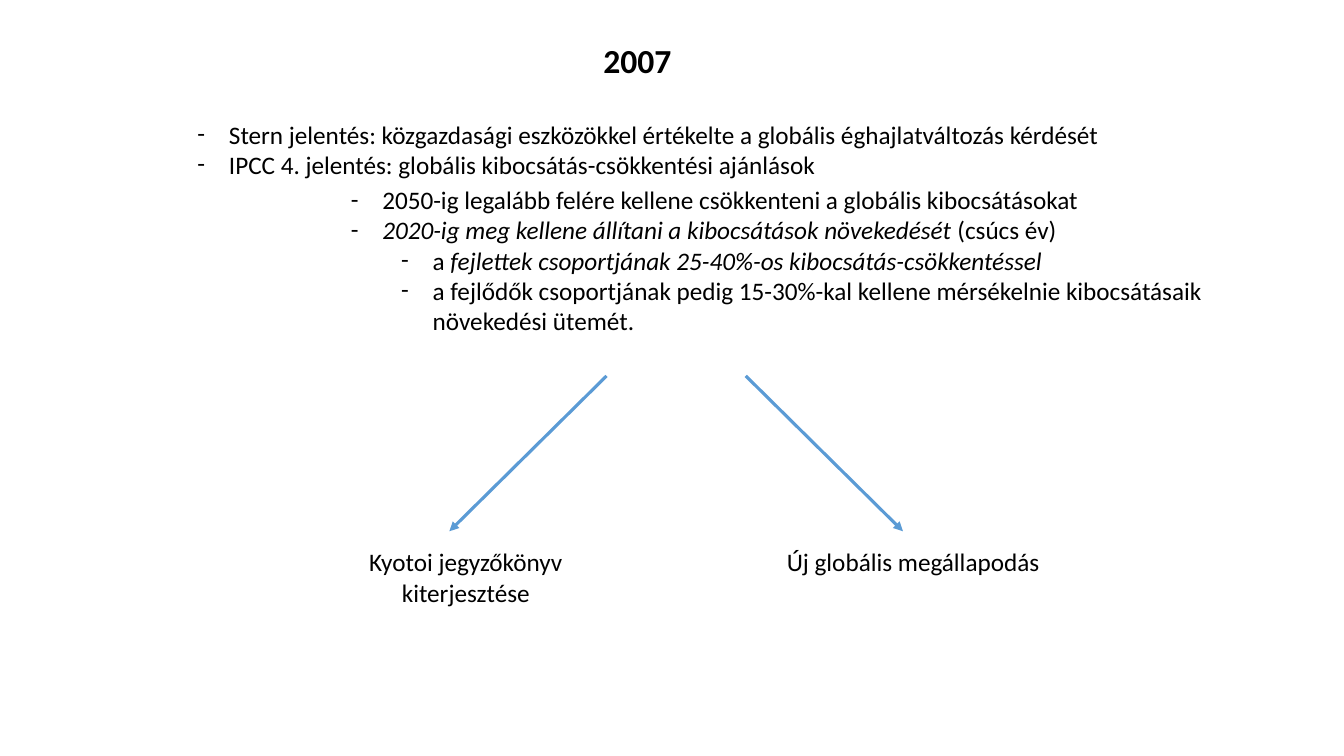
import pptx
import pptx.util
import pptx.dml.color
import pptx.enum.shapes
import pptx.enum.text
import lxml.etree
import pptx.oxml.ns

Pt = pptx.util.Pt
BLACK = pptx.dml.color.RGBColor(0x00, 0x00, 0x00)
BLUE = pptx.dml.color.RGBColor(0x5B, 0x9B, 0xD5)
CENTER = pptx.enum.text.PP_ALIGN.CENTER
FONT = "Calibri"
HANG = 22.5
LEVEL_STEP = 36

# Paragraphs are (level, runs); runs are (text, italic).
REPORTS = [
    (0, [("Stern jelentés: közgazdasági eszközökkel értékelte a globális éghajlatváltozás kérdését", False)]),
    (0, [("IPCC 4. jelentés: globális kibocsátás-csökkentési ajánlások", False)]),
]
TARGETS = [
    (0, [("2050-ig legalább felére kellene csökkenteni a globális kibocsátásokat", False)]),
    (0, [("2020-ig meg kellene állítani a kibocsátások növekedését ", True), ("(csúcs év)", False)]),
    (1, [("a ", False), ("fejlettek csoportjának 25-40%-os kibocsátás-csökkentéssel", True)]),
    (1, [("a fejlődők csoportjának pedig 15-30%-kal kellene mérsékelnie kibocsátásaik növekedési ütemét.", False)]),
]
# Boxes are (left, top, width, height), paragraphs, format.
BOXES = [
    ((414.5, 25.2, 81.5, 36), [(0, [("2007", False)])], {"size": 24, "bold": True}),
    ((134, 81.4, 665, 51), REPORTS, {"bullets": True, "wrap": False}),
    ((238.5, 387, 188.5, 51), [(0, [("Kyotoi jegyzőkönyv kiterjesztése", False)])], {}),
    ((545, 387, 214.5, 29), [(0, [("Új globális megállapodás", False)])], {}),
    ((243.5, 128.2, 628.5, 116.5), TARGETS, {"bullets": True}),
]
# The two arrows mirror each other about the axis.
AXIS, ARROW_TOP, ARROW_BOTTOM = 483, 268.5, 379.5
INNER, OUTER = 49.7, 162


def add_xml(parent, tag, **attrs):
    return lxml.etree.SubElement(parent, pptx.oxml.ns.qn(tag), attrs)


def add_text(s, box, paragraphs, size=18, bold=False, bullets=False, wrap=True):
    tf = s.shapes.add_textbox(*map(Pt, box)).text_frame
    tf.word_wrap = wrap
    tf.auto_size = pptx.enum.text.MSO_AUTO_SIZE.SHAPE_TO_FIT_TEXT
    for i, (level, runs) in enumerate(paragraphs):
        p = tf.add_paragraph() if i else tf.paragraphs[0]
        p.level = level
        if bullets:
            props = p._p.get_or_add_pPr()
            props.set("marL", str(Pt(HANG + level * LEVEL_STEP)))
            props.set("indent", str(-Pt(HANG)))
            add_xml(props, "a:buFont", typeface=FONT)
            add_xml(props, "a:buChar", char="-")
        else:
            p.alignment = CENTER
        for text, italic in runs:
            r = p.add_run()
            r.text = text
            r.font.color.rgb = BLACK
            style = {"name": FONT, "size": Pt(size), "bold": bold, "italic": italic}
            for name, value in style.items():
                setattr(r.font, name, value)


def add_arrow(s, side):
    """Draw a falling arrow; side is -1 for left of the axis, 1 for right."""
    ends = (AXIS + side * INNER, ARROW_TOP, AXIS + side * OUTER, ARROW_BOTTOM)
    line = s.shapes.add_connector(pptx.enum.shapes.MSO_CONNECTOR.STRAIGHT, *map(Pt, ends))
    line.line.color.rgb = BLUE
    line.line.width = Pt(2.25)
    add_xml(line.line._get_or_add_ln(), "a:tailEnd", type="triangle")
    add_xml(line._element.spPr, "a:effectLst")


def main():
    prs = pptx.Presentation()
    prs.slide_width, prs.slide_height = Pt(960), Pt(540)
    s = prs.slides.add_slide(prs.slide_layouts[6])
    for box, paragraphs, style in BOXES:
        add_text(s, box, paragraphs, **style)
    for side in (-1, 1):
        add_arrow(s, side)
    prs.save("out.pptx")


if __name__ == "__main__":
    main()
